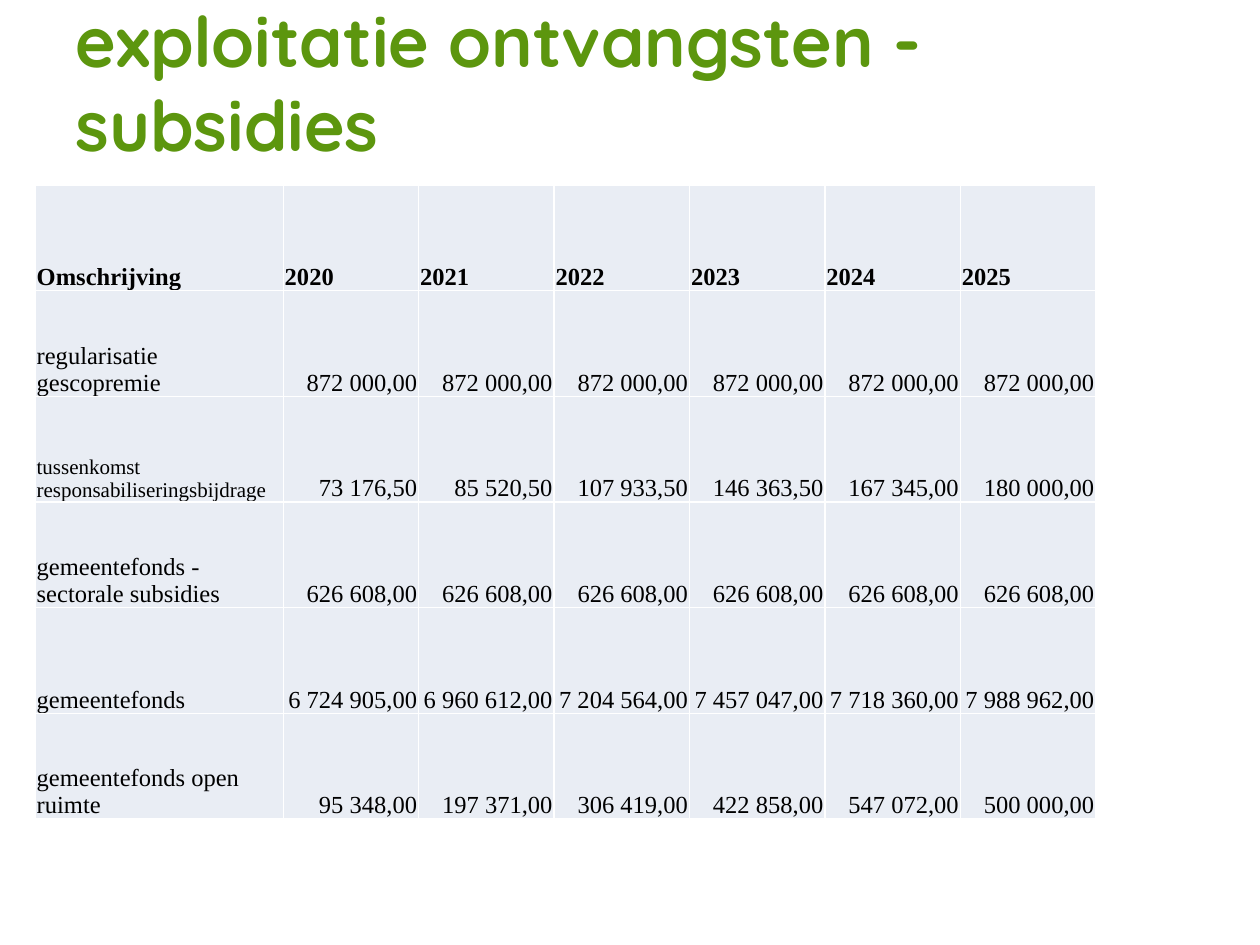
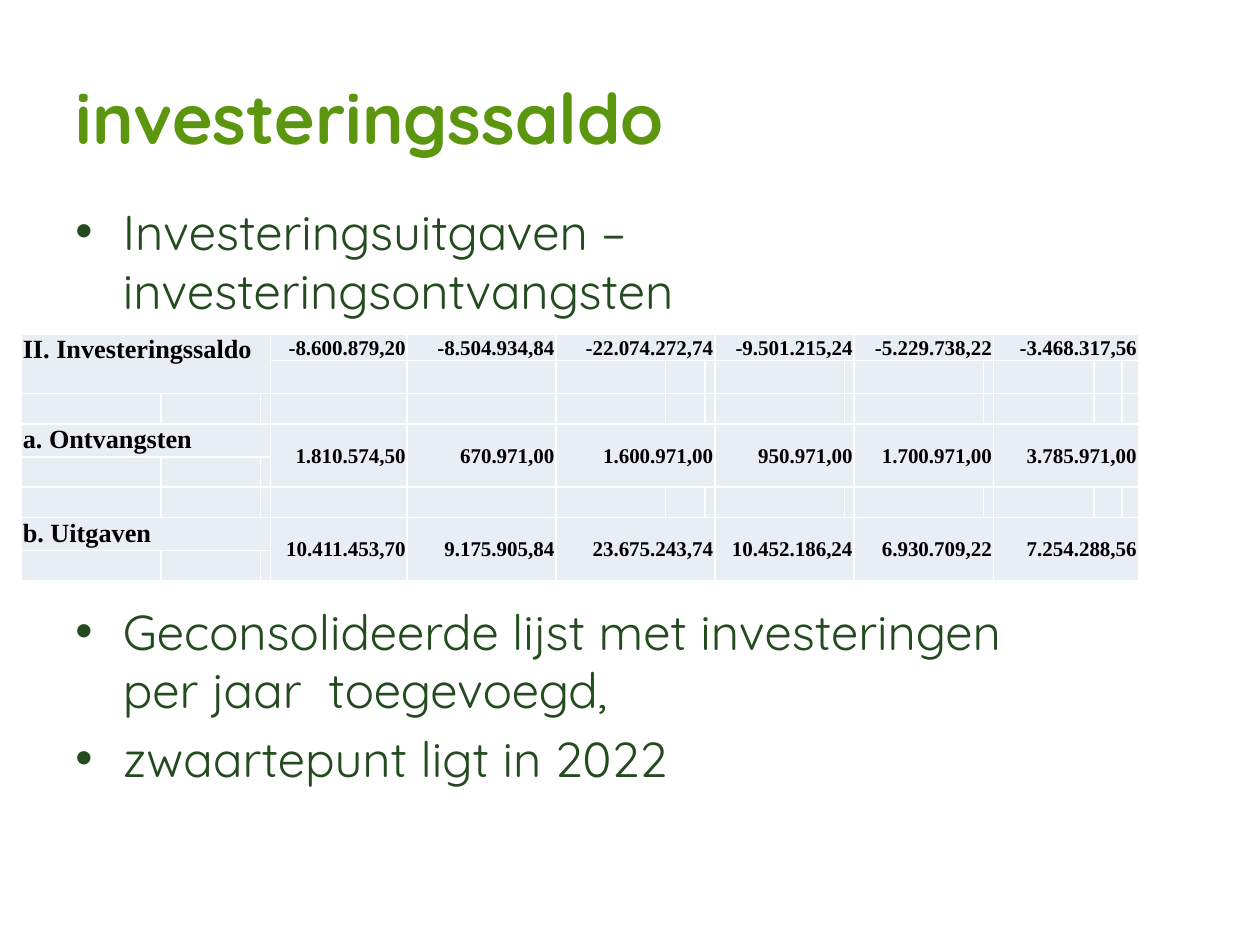
from dataclasses import dataclass

from lxml.etree import SubElement
from pptx import Presentation
from pptx.dml.color import RGBColor
from pptx.enum.text import MSO_ANCHOR, MSO_AUTO_SIZE, PP_ALIGN
from pptx.oxml.ns import qn
from pptx.slide import Slide
from pptx.table import Table, _Cell
from pptx.text.text import _Paragraph
from pptx.util import Cm, Pt

TITLE_GREEN = "5C960E"
BODY_GREEN = "244A1F"
CELL_FILL = "E9EDF4"
WHITE = "FFFFFF"
BLACK = "000000"
DECK_FONT = "Quicksand"
TABLE_FONT = "Times New Roman"
TEXT_LEFT, TEXT_WIDTH = Cm(1.27), Cm(20.83)
BULLET_INDENT = Cm(0.96)
CELL_MARGIN = Cm(0.03)


@dataclass(frozen=True)
class TextStyle:
    size: float
    color: str
    font: str
    bold: bool = False


@dataclass(frozen=True)
class Bullet:
    text: str
    space_before: float


@dataclass(frozen=True)
class Grid:
    """Position, column widths and row heights of a table, in centimetres."""
    left: float
    top: float
    widths: list[float]
    heights: list[float]


@dataclass(frozen=True)
class Balance:
    """A line of the investment balance, starting at a table row."""
    row: int
    label: str
    label_rows: int
    amount_rows: int
    amounts: list[str]


TITLE = TextStyle(40, TITLE_GREEN, DECK_FONT, True)
BODY = TextStyle(28, BODY_GREEN, DECK_FONT)
HEADER = TextStyle(14, BLACK, TABLE_FONT, True)
PLAIN = TextStyle(14, BLACK, TABLE_FONT)
SMALL = TextStyle(12, BLACK, TABLE_FONT)
BALANCE_LABEL = TextStyle(15, BLACK, TABLE_FONT, True)
BALANCE_AMOUNT = TextStyle(12, BLACK, TABLE_FONT, True)

YEARS = [str(year) for year in range(2020, 2026)]
LONG_LABEL = "tussenkomst responsabiliseringsbijdrage"
SUBSIDIES = {
    "regularisatie gescopremie": ["872 000,00"] * len(YEARS),
    LONG_LABEL: ["73 176,50", "85 520,50", "107 933,50",
                 "146 363,50", "167 345,00", "180 000,00"],
    "gemeentefonds - sectorale subsidies": ["626 608,00"] * len(YEARS),
    "gemeentefonds": ["6 724 905,00", "6 960 612,00", "7 204 564,00",
                      "7 457 047,00", "7 718 360,00", "7 988 962,00"],
    "gemeentefonds open ruimte": ["95 348,00", "197 371,00", "306 419,00",
                                  "422 858,00", "547 072,00", "500 000,00"],
}
SUBSIDY_GRID = Grid(0.71, 3.73, [5] + [2.73] * len(YEARS),
                    [2.13] * (len(SUBSIDIES) + 1))

# Each inner list is one column of the balance, split into narrow cells.
BALANCE_COLUMNS = [[2.82, 2, 0.2], [2.76], [3], [2.21, 0.79, 0.2],
                   [2.61, 0.2], [2.61, 0.2], [2.03, 0.56, 0.33]]
BALANCE_GRID = Grid(0.43, 6.73, sum(BALANCE_COLUMNS, []), [0.48] + [0.61] * 7)
BALANCES = [
    Balance(0, "II. Investeringssaldo", 2, 1,
            ["-8.600.879,20", "-8.504.934,84", "-22.074.272,74",
             "-9.501.215,24", "-5.229.738,22", "-3.468.317,56"]),
    Balance(3, "a. Ontvangsten", 1, 2,
            ["1.810.574,50", "670.971,00", "1.600.971,00",
             "950.971,00", "1.700.971,00", "3.785.971,00"]),
    Balance(6, "b. Uitgaven", 1, 2,
            ["10.411.453,70", "9.175.905,84", "23.675.243,74",
             "10.452.186,24", "6.930.709,22", "7.254.288,56"]),
]
BULLETS = [
    Bullet("Investeringsuitgaven – investeringsontvangsten", 0),
    Bullet("Geconsolideerde lijst met investeringen per jaar  toegevoegd,", 161),
    Bullet("zwaartepunt ligt in 2022", 5.6),
]


def rgb(color: str) -> RGBColor:
    return RGBColor.from_string(color)


def add_run(paragraph: _Paragraph, text: str, style: TextStyle) -> None:
    run = paragraph.add_run()
    run.text = text
    run.font.size = Pt(style.size)
    run.font.name = style.font
    run.font.bold = style.bold
    run.font.color.rgb = rgb(style.color)


def add_titled_slide(prs, text: str, height: float) -> Slide:
    slide = prs.slides.add_slide(prs.slide_layouts[5])
    title = slide.shapes.title
    title.left, title.top = TEXT_LEFT, Cm(0.76)
    title.width, title.height = TEXT_WIDTH, Cm(height)
    frame = title.text_frame
    frame.auto_size = MSO_AUTO_SIZE.NONE
    frame.word_wrap = True
    frame.vertical_anchor = MSO_ANCHOR.MIDDLE
    frame.paragraphs[0].alignment = PP_ALIGN.LEFT
    add_run(frame.paragraphs[0], text, TITLE)
    return slide


def add_bullets(slide: Slide, bullets: list[Bullet]) -> None:
    box = slide.shapes.add_textbox(TEXT_LEFT, Cm(3.94), TEXT_WIDTH, Cm(13.08))
    frame = box.text_frame
    frame.word_wrap = True
    for index, bullet in enumerate(bullets):
        paragraph = frame.add_paragraph() if index else frame.paragraphs[0]
        properties = paragraph._p.get_or_add_pPr()
        properties.set("marL", str(BULLET_INDENT))
        properties.set("indent", str(-BULLET_INDENT))
        SubElement(properties, qn("a:buFont"), typeface="Arial")
        SubElement(properties, qn("a:buChar"), char="•")
        if bullet.space_before:
            paragraph.space_before = Pt(bullet.space_before)
        add_run(paragraph, bullet.text, BODY)


def format_cell(cell: _Cell) -> None:
    """Set thin margins, white borders and the shared fill."""
    cell.margin_left = cell.margin_right = cell.margin_top = CELL_MARGIN
    cell.margin_bottom = 0
    properties = cell._tc.get_or_add_tcPr()
    for side in ("lnL", "lnR", "lnT", "lnB"):
        line = SubElement(properties, qn(f"a:{side}"), w=str(Pt(1)))
        line_fill = SubElement(line, qn("a:solidFill"))
        SubElement(line_fill, qn("a:srgbClr"), val=WHITE)
    cell.fill.solid()
    cell.fill.fore_color.rgb = rgb(CELL_FILL)
    # A small end mark keeps empty cells from stretching their row.
    SubElement(cell.text_frame.paragraphs[0]._p, qn("a:endParaRPr"), sz="1000")


def add_grid(slide: Slide, grid: Grid) -> Table:
    table = slide.shapes.add_table(
        len(grid.heights), len(grid.widths), Cm(grid.left), Cm(grid.top),
        Cm(sum(grid.widths)), Cm(sum(grid.heights))).table
    table.first_row = table.horz_banding = False
    for column, width in zip(table.columns, grid.widths):
        column.width = Cm(width)
    for row, height in zip(table.rows, grid.heights):
        row.height = Cm(height)
    for cell in table.iter_cells():
        format_cell(cell)
    return table


def fill_cell(cell: _Cell, text: str, style: TextStyle, anchor: MSO_ANCHOR,
              alignment: PP_ALIGN = PP_ALIGN.LEFT) -> None:
    cell.vertical_anchor = anchor
    paragraph = cell.text_frame.paragraphs[0]
    paragraph.alignment = alignment
    add_run(paragraph, text, style)


def merge_block(table: Table, row: int, column: int,
                row_count: int, column_count: int) -> _Cell:
    cell = table.cell(row, column)
    if row_count * column_count > 1:
        cell.merge(table.cell(row + row_count - 1, column + column_count - 1))
    return cell


def build_subsidies(prs) -> None:
    slide = add_titled_slide(prs, "exploitatie ontvangsten - subsidies", 1.75)
    table = add_grid(slide, SUBSIDY_GRID)
    for column, heading in enumerate(["Omschrijving", *YEARS]):
        fill_cell(table.cell(0, column), heading, HEADER, MSO_ANCHOR.BOTTOM)
    for row, (label, amounts) in enumerate(SUBSIDIES.items(), start=1):
        fill_cell(table.cell(row, 0), label,
                  SMALL if label == LONG_LABEL else PLAIN, MSO_ANCHOR.BOTTOM)
        for column, amount in enumerate(amounts, start=1):
            fill_cell(table.cell(row, column), amount, PLAIN,
                      MSO_ANCHOR.BOTTOM, PP_ALIGN.RIGHT)


def build_balance(prs) -> None:
    slide = add_titled_slide(prs, "investeringssaldo", 3.18)
    add_bullets(slide, BULLETS)
    table = add_grid(slide, BALANCE_GRID)
    label_span, *amount_spans = [len(widths) for widths in BALANCE_COLUMNS]
    for balance in BALANCES:
        label_cell = merge_block(table, balance.row, 0,
                                 balance.label_rows, label_span)
        fill_cell(label_cell, balance.label, BALANCE_LABEL, MSO_ANCHOR.TOP)
        column = label_span
        for amount, span in zip(balance.amounts, amount_spans):
            amount_cell = merge_block(table, balance.row, column,
                                      balance.amount_rows, span)
            fill_cell(amount_cell, amount, BALANCE_AMOUNT,
                      MSO_ANCHOR.MIDDLE, PP_ALIGN.RIGHT)
            column += span


def main() -> None:
    prs = Presentation()
    prs.slide_width, prs.slide_height = Cm(25.4), Cm(19.05)
    build_subsidies(prs)
    build_balance(prs)
    prs.save("out.pptx")


if __name__ == "__main__":
    main()
